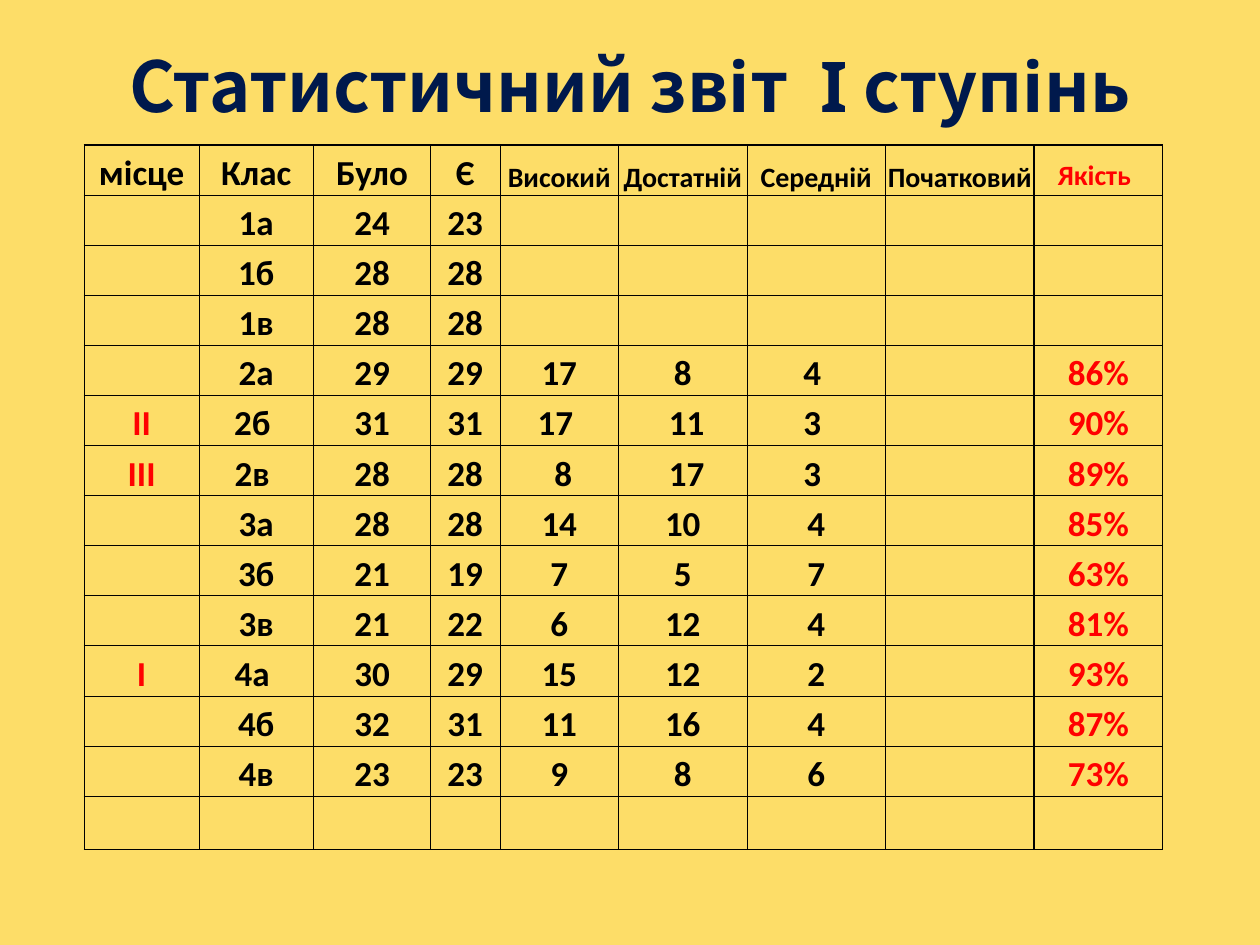
from dataclasses import dataclass

from lxml.etree import SubElement
from pptx import Presentation
from pptx.dml.color import RGBColor as Rgb
from pptx.enum.text import MSO_ANCHOR as Anchor, PP_ALIGN as Align
from pptx.oxml.ns import qn
from pptx.util import Cm, Pt


@dataclass(frozen=True)
class Theme:
    background: str = "FDDD68"
    title_color: str = "00194C"
    text_color: str = "000000"
    accent: str = "FF0000"
    title_font: str = "Noto Sans CJK KR"
    table_font: str = "Calibri"
    title_size: float = 40
    body_size: float = 20
    small_size: float = 16
    thin_line: float = 0.5
    thick_line: float = 1


TITLE = "Статистичний звіт  І ступінь"
HEADERS = ["місце", "Клас", "Було", "Є", "Високий", "Достатній",
           "Середній", "Початковий", "Якість"]
CLASSES = [
    ["", "1а", "24", "23", "", "", "", "", ""],
    ["", "1б", "28", "28", "", "", "", "", ""],
    ["", "1в", "28", "28", "", "", "", "", ""],
    ["", "2а", "29", "29", "17", "8", "4 ", "", "86%"],
    ["ІІ", "2б ", "31", "31", "17 ", " 11", "3 ", "", "90%"],
    ["ІІІ", "2в ", "28", "28", " 8", " 17", "3 ", "", "89%"],
    ["", "3а", "28", "28", "14", "10", "4", "", "85%"],
    ["", "3б", "21", "19", "7", "5", "7", "", "63%"],
    ["", "3в", "21", "22", "6", "12", "4", "", "81%"],
    ["І", "4а ", "30", "29", "15", "12", "2", "", "93%"],
    ["", "4б", "32", "31", "11", "16", "4", "", "87%"],
    ["", "4в", "23", "23", "9", "8", "6", "", "73%"],
    [""] * 9,
]
COLUMN_WIDTHS = [2.31, 2.31, 2.36, 1.4, 2.39, 2.59, 2.79, 3, 2.59]
ROW_HEIGHTS = [1.01] * 13 + [1.07]
PLACE, FIRST_LEVEL, QUALITY = 0, 4, 8


class SlideBuilder:
    def __init__(self, presentation, theme):
        self.theme = theme
        self.slide = presentation.slides.add_slide(presentation.slide_layouts[5])
        fill = self.slide.background.fill
        fill.solid()
        fill.fore_color.rgb = Rgb.from_string(theme.background)

    def format_font(self, font, name, size, color):
        values = {"name": name, "size": Pt(size), "bold": True}
        for attribute, value in values.items():
            setattr(font, attribute, value)
        font.color.rgb = Rgb.from_string(color)

    def title(self, text, left, top, width, height):
        shape = self.slide.shapes.title
        box = {"left": left, "top": top, "width": width, "height": height}
        for attribute, value in box.items():
            setattr(shape, attribute, Cm(value))
        shape.text_frame.vertical_anchor = Anchor.MIDDLE
        paragraph = shape.text_frame.paragraphs[0]
        paragraph.alignment = Align.CENTER
        run = paragraph.add_run()
        run.text = text
        theme = self.theme
        self.format_font(run.font, theme.title_font, theme.title_size, theme.title_color)

    def table(self, rows, left, top, widths, heights):
        frame = self.slide.shapes.add_table(
            len(rows), len(widths), Cm(left), Cm(top), Cm(sum(widths)), Cm(sum(heights)))
        table = frame.table
        table.first_row = table.horz_banding = False
        for column, width in zip(table.columns, widths):
            column.width = Cm(width)
        for row, height in zip(table.rows, heights):
            row.height = Cm(height)
        last_row, last_column = len(rows) - 1, len(widths) - 1
        for r, texts in enumerate(rows):
            for c, text in enumerate(texts):
                cell = table.cell(r, c)
                # Heavy lines frame the table and the quality column
                self.borders(cell, {
                    "a:lnL": c in (0, QUALITY),
                    "a:lnR": c in (QUALITY - 1, last_column),
                    "a:lnT": r == 0,
                    "a:lnB": r == last_row,
                })
                self.cell(cell, text, r == 0, c)

    def borders(self, cell, heavy_sides):
        properties = cell._tc.get_or_add_tcPr()
        for tag, heavy in heavy_sides.items():
            width = self.theme.thick_line if heavy else self.theme.thin_line
            line = SubElement(properties, qn(tag), w=str(Pt(width)))
            fill = SubElement(line, qn("a:solidFill"))
            SubElement(fill, qn("a:srgbClr"), val=self.theme.text_color)

    def cell(self, cell, text, is_header, column):
        theme = self.theme
        cell.fill.background()
        values = {"margin_left": Cm(0.02), "margin_right": Cm(0.02),
                  "margin_top": Cm(0.02), "margin_bottom": 0,
                  "vertical_anchor": Anchor.BOTTOM}
        for attribute, value in values.items():
            setattr(cell, attribute, value)
        if not text:
            return
        paragraph = cell.text_frame.paragraphs[0]
        paragraph.alignment = Align.CENTER
        size = theme.small_size if is_header and column >= FIRST_LEVEL else theme.body_size
        is_accent = column == QUALITY or (column == PLACE and not is_header)
        pieces = [(text, size)]
        if is_header and column == QUALITY:
            pieces.append((" ", theme.body_size))
        for piece, piece_size in pieces:
            run = paragraph.add_run()
            run.text = piece
            self.format_font(run.font, theme.table_font, piece_size,
                             theme.accent if is_accent else theme.text_color)


def main():
    presentation = Presentation()
    presentation.slide_width, presentation.slide_height = Cm(25.4), Cm(19.05)
    builder = SlideBuilder(presentation, Theme())
    # Heading
    builder.title(TITLE, 0, 0.64, 25.4, 2.11)
    # Results by class
    builder.table([HEADERS] + CLASSES, 1.7, 2.92, COLUMN_WIDTHS, ROW_HEIGHTS)
    presentation.save("out.pptx")


if __name__ == "__main__":
    main()
